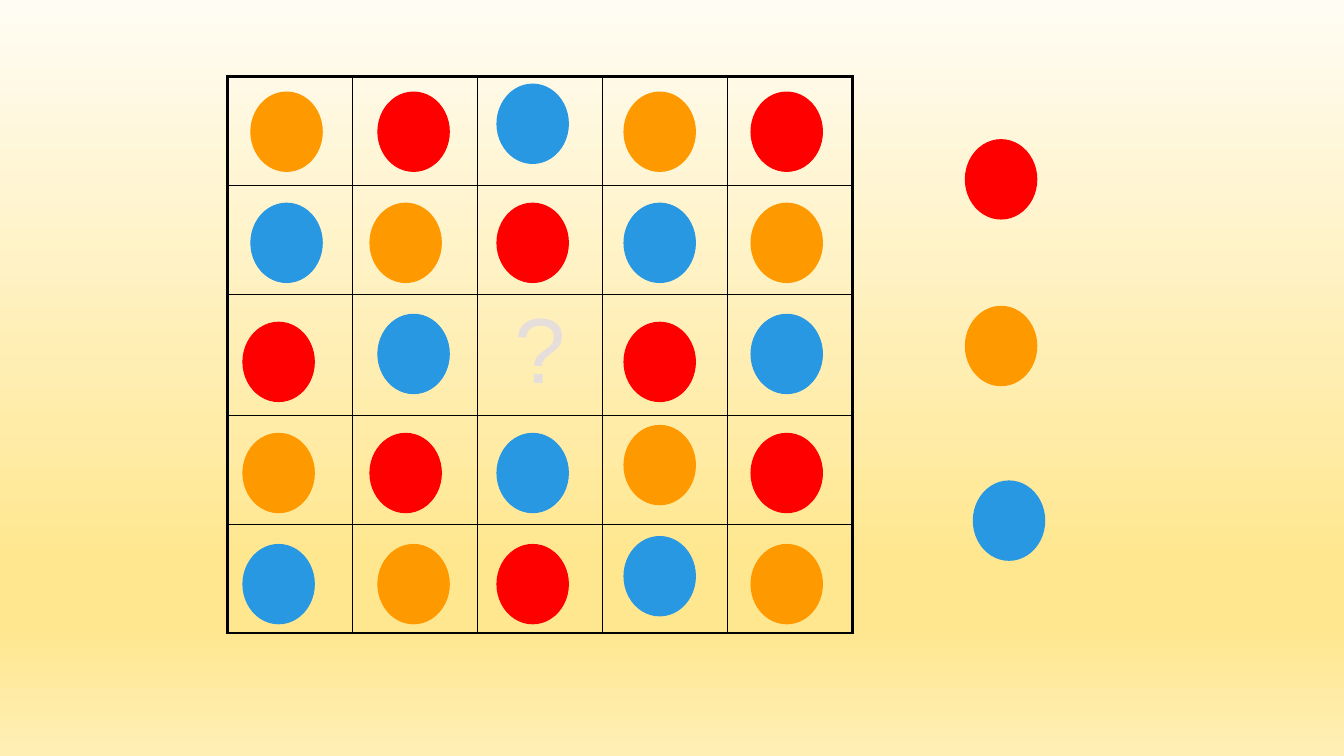
"""Build a colour-pattern puzzle: a five by five board of discs and three answers."""
from dataclasses import dataclass

from lxml.etree import SubElement
from pptx import Presentation
from pptx.dml.color import RGBColor
from pptx.enum.shapes import MSO_SHAPE
from pptx.enum.text import PP_ALIGN
from pptx.oxml.ns import qn
from pptx.slide import Slide
from pptx.table import _Cell
from pptx.util import Inches, Mm, Pt


@dataclass(frozen=True)
class Theme:
    """Colours, type and line sizes of the slide."""
    orange: str = "FF9900"
    red: str = "FF0000"
    blue: str = "2998E3"
    border: str = "000000"
    question: str = "E5DEDB"
    backdrop: tuple = ((0, "FFFCF3"), (74, "FFE790"), (83, "FFE790"), (100, "FFEFB5"))
    font: str = "Arial"
    question_size: float = 66
    disc_line: float = 0.75
    inner_border: float = 1
    outer_border: float = 2.25


@dataclass(frozen=True)
class Disc:
    """A disc placed in grid steps from the first disc corner."""
    column: int
    row: int
    color: str


THEME = Theme()
PATTERN = (THEME.orange, THEME.red, THEME.blue)
BOARD_SIZE = 5
MISSING = (2, 2)
ROW_HEIGHTS = (1.08, 1.08, 1.2, 1.08, 1.08)
COLUMN_WIDTH = 1.24
STEP = Mm(2)
GRID_LEFT, GRID_TOP = Mm(61.2), Mm(23.2)
DISC_COLUMNS, DISC_ROWS = 9, 10
COLUMN_PITCH, ROW_PITCH = 16, 14
NUDGED_RIGHT = {(0, 0), (0, 1), (1, 0), (2, 1), (4, 1)}
NUDGED_DOWN = {(2, 0), (2, 3)} | {(row, column) for row in (3, 4) for column in (0, 1, 2, 4)}
NUDGED_UP = {(0, 2)}
ANSWERS = (
    Disc(91, 6, THEME.red),
    Disc(91, 27, THEME.orange),
    Disc(92, 49, THEME.blue),
)


def paint_background(slide: Slide) -> None:
    """Fill the background with the vertical gradient."""
    fill = slide.background.fill
    fill.gradient()
    fill.gradient_angle = 270
    stops = slide.element.find(".//" + qn("a:gsLst"))
    for stop in list(stops):
        stops.remove(stop)
    for position, color in THEME.backdrop:
        stop = SubElement(stops, qn("a:gs"), pos=str(position * 1000))
        SubElement(stop, qn("a:srgbClr"), val=color)


def draw_borders(cell: _Cell, row: int, column: int) -> None:
    """Draw cell borders, heavier on the edge of the board."""
    last = BOARD_SIZE - 1
    edges = {"L": column == 0, "R": column == last, "T": row == 0, "B": row == last}
    properties = cell._tc.get_or_add_tcPr()
    for side, is_outer in edges.items():
        width = Pt(THEME.outer_border if is_outer else THEME.inner_border)
        line = SubElement(properties, qn(f"a:ln{side}"), w=str(width))
        fill = SubElement(line, qn("a:solidFill"))
        SubElement(fill, qn("a:srgbClr"), val=THEME.border)


def draw_board(slide: Slide) -> None:
    """Add the board table with its question mark."""
    board = slide.shapes.add_table(
        BOARD_SIZE, BOARD_SIZE, Inches(2.26), Inches(0.76),
        Inches(COLUMN_WIDTH * BOARD_SIZE), Inches(sum(ROW_HEIGHTS)),
    ).table
    board.first_row = board.horz_banding = False
    for board_column in board.columns:
        board_column.width = Inches(COLUMN_WIDTH)
    for row, height in enumerate(ROW_HEIGHTS):
        board.rows[row].height = Inches(height)
        for column in range(BOARD_SIZE):
            cell = board.cell(row, column)
            draw_borders(cell, row, column)
            cell.fill.background()
    question = board.cell(*MISSING).text_frame.paragraphs[0]
    question.text = "?"
    question.alignment = PP_ALIGN.CENTER
    font = question.runs[0].font
    font.name, font.size = THEME.font, Pt(THEME.question_size)
    font.color.rgb = RGBColor.from_string(THEME.question)


def board_discs() -> list[Disc]:
    """List the discs, whose colours shift by one place on each row."""
    cells = [(row, column) for row in range(BOARD_SIZE) for column in range(BOARD_SIZE)]
    return [
        Disc(
            column * COLUMN_PITCH + (place in NUDGED_RIGHT),
            row * ROW_PITCH + (place in NUDGED_DOWN) - (place in NUDGED_UP),
            PATTERN[(column - row) % len(PATTERN)],
        )
        for place in cells if place != MISSING
        for row, column in [place]
    ]


def draw_disc(slide: Slide, disc: Disc) -> None:
    """Add one disc to the slide."""
    oval = slide.shapes.add_shape(
        MSO_SHAPE.OVAL,
        GRID_LEFT + disc.column * STEP, GRID_TOP + disc.row * STEP,
        DISC_COLUMNS * STEP, DISC_ROWS * STEP,
    )
    oval.shadow.inherit = False
    color = RGBColor.from_string(disc.color)
    oval.fill.solid()
    oval.fill.fore_color.rgb = color
    oval.line.color.rgb = color
    oval.line.width = Pt(THEME.disc_line)


def main() -> None:
    """Build and save the presentation."""
    presentation = Presentation()
    presentation.slide_width, presentation.slide_height = Inches(13.33), Inches(7.5)
    slide = presentation.slides.add_slide(presentation.slide_layouts.get_by_name("Blank"))
    paint_background(slide)
    draw_board(slide)
    for disc in (*ANSWERS, *board_discs()):
        draw_disc(slide, disc)
    presentation.save("out.pptx")


if __name__ == "__main__":
    main()
